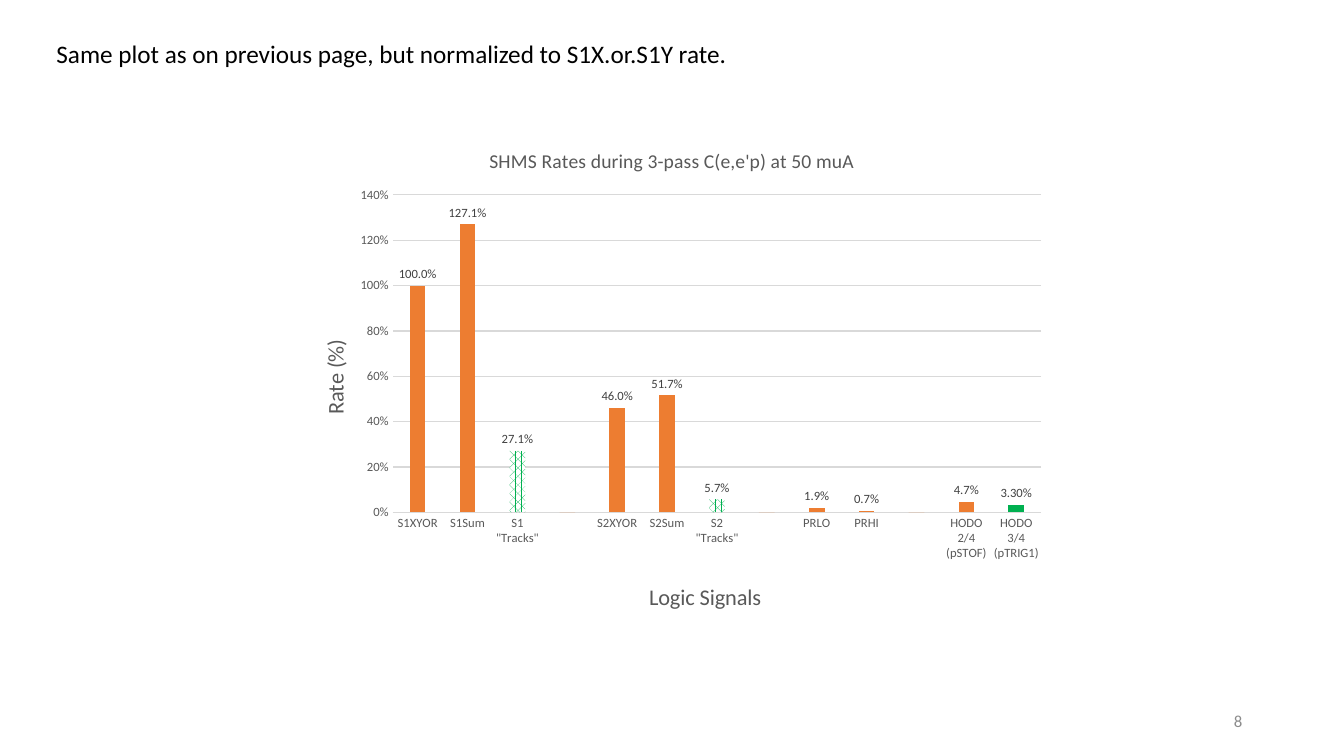
import dataclasses

import pptx
import pptx.chart.data
import pptx.dml.color
import pptx.enum.chart
import pptx.enum.dml
import pptx.enum.text
import pptx.oxml
import pptx.oxml.ns
import pptx.util

Inches = pptx.util.Inches
Color = pptx.dml.color.RGBColor.from_string


@dataclasses.dataclass(frozen=True)
class Theme:
    font: str = "Calibri"
    black: str = "000000"
    white: str = "FFFFFF"
    label: str = "404040"
    axis: str = "595959"
    grid: str = "D9D9D9"
    number: str = "8C8C8C"
    bar: str = "ED7D31"
    green: str = "00B050"
    heading_size: int = 18
    axis_title_size: int = 16
    chart_title_size: int = 14
    number_size: int = 12
    chart_size: int = 10
    label_size: int = 9


THEME = Theme()

RATES = [
    ("S1XYOR", 1), ("S1Sum", 1.271), ('S1 "Tracks"', 0.271), ("", 0),
    ("S2XYOR", 0.46), ("S2Sum", 0.517), ('S2 "Tracks"', 0.057), ("", 0),
    ("PRLO", 0.019), ("PRHI", 0.007), ("", 0),
    ("HODO 2/4 (pSTOF)", 0.047), ("HODO 3/4 (pTRIG1)", 0.033),
]


def set_font(font, size, color):
    font.name = THEME.font
    font.size = pptx.util.Pt(size)
    font.bold = False
    font.color.rgb = Color(color)


def set_line(line, color):
    line.color.rgb = Color(color)
    line.width = pptx.util.Pt(0.75)


def chart_xml(content):
    namespace = pptx.oxml.ns.nsdecls("c")
    tag, separator, rest = content.partition(">")
    if tag.endswith("/"):
        return pptx.oxml.parse_xml(f"{tag[:-1]} {namespace}/>{rest}")
    return pptx.oxml.parse_xml(f"{tag} {namespace}>{rest}")


def set_layout(parent, index, target="", **fractions):
    for layout in parent.xpath("./c:layout"):
        parent.remove(layout)
    modes = "".join(f'<c:{side}Mode val="edge"/>' for side in "xy")
    values = "".join(f'<c:{key} val="{value}"/>' for key, value in fractions.items())
    parent.insert(index, chart_xml(
        f"<c:layout><c:manualLayout>{target}{modes}{values}</c:manualLayout></c:layout>"))


def set_title(text_frame, text, size):
    text_frame.text = text
    set_font(text_frame.paragraphs[0].font, size, THEME.axis)


def format_axes(chart):
    titles = ((chart.category_axis, "Logic Signals"), (chart.value_axis, "Rate (%)"))
    for axis, text in titles:
        set_title(axis.axis_title.text_frame, text, THEME.axis_title_size)
        axis.major_tick_mark = axis.minor_tick_mark = pptx.enum.chart.XL_TICK_MARK.NONE
        set_font(axis.tick_labels.font, THEME.label_size, THEME.axis)
    chart.category_axis.has_major_gridlines = False
    set_line(chart.category_axis.format.line, THEME.grid)
    value_axis = chart.value_axis
    value_axis.minimum_scale, value_axis.maximum_scale = 0, 1.4
    value_axis.major_unit = 0.2
    value_axis.tick_labels.number_format = "0%"
    value_axis.tick_labels.number_format_is_linked = False
    value_axis.format.line.fill.background()
    set_line(value_axis.major_gridlines.format.line, THEME.grid)


def format_bars(series):
    series.invert_if_negative = False
    series.format.fill.solid()
    series.format.fill.fore_color.rgb = Color(THEME.bar)
    for index, (name, rate) in enumerate(RATES):
        if "Tracks" in name:
            fill = series.points[index].format.fill
            fill.patterned()
            fill.pattern = pptx.enum.dml.MSO_PATTERN.PERCENT_60
            fill.fore_color.rgb = Color(THEME.green)
            fill.back_color.rgb = Color(THEME.white)
    trigger_fill = series.points[len(RATES) - 1].format.fill
    trigger_fill.solid()
    trigger_fill.fore_color.rgb = Color(THEME.green)


def format_labels(chart, series):
    outside = pptx.enum.chart.XL_LABEL_POSITION.OUTSIDE_END
    labels = series.data_labels
    labels.show_value = True
    labels.number_format = "0.0%"
    labels.number_format_is_linked = False
    trigger_label = series.points[len(RATES) - 1].data_label
    for label in (labels, trigger_label):
        label.position = outside
        set_font(label.font, THEME.label_size, THEME.label)
    trigger = chart.element.xpath(".//c:ser/c:dLbls/c:dLbl")[0]
    trigger.insert(1, chart_xml('<c:numFmt formatCode="0.00%" sourceLinked="0"/>'))
    for index, (name, rate) in enumerate(RATES):
        if not name:
            trigger.addprevious(chart_xml(
                f'<c:dLbl><c:idx val="{index}"/><c:delete val="1"/></c:dLbl>'))


def add_rate_chart(slide, left, top, width, height):
    data = pptx.chart.data.CategoryChartData()
    data.categories = [name for name, rate in RATES]
    data.add_series("Series 1", [rate for name, rate in RATES])
    frame = slide.shapes.add_chart(
        pptx.enum.chart.XL_CHART_TYPE.COLUMN_CLUSTERED,
        Inches(left), Inches(top), Inches(width), Inches(height), data)
    chart = frame.chart
    chart.has_legend = False
    set_font(chart.font, THEME.chart_size, THEME.black)
    set_title(chart.chart_title.text_frame,
              "SHMS Rates during 3-pass C(e,e'p) at 50 muA", THEME.chart_title_size)
    plot = chart.plots[0]
    plot.gap_width, plot.overlap = 219, -27
    plot.vary_by_categories = False
    format_axes(chart)
    series = plot.series[0]
    format_bars(series)
    format_labels(chart, series)
    root = chart.element
    set_layout(root.xpath(".//c:plotArea")[0], 0,
               '<c:layoutTarget val="inner"/>', x=0.137, y=0.134, w=0.843, h=0.635)
    set_layout(root.xpath(".//c:catAx/c:title")[0], 1, x=0.465, y=0.9)
    set_layout(root.xpath(".//c:valAx/c:title")[0], 1, x=0.037, y=0.415)


def place_text(shape, left, top, width, height, text, size, color, alignment, anchor):
    shape.left, shape.top = Inches(left), Inches(top)
    shape.width, shape.height = Inches(width), Inches(height)
    frame = shape.text_frame
    frame.word_wrap = True
    frame.auto_size = pptx.enum.text.MSO_AUTO_SIZE.NONE
    frame.vertical_anchor = anchor
    frame.text = text
    paragraph = frame.paragraphs[0]
    paragraph.alignment = alignment
    paragraph.line_spacing = 1.0
    set_font(paragraph.font, size, color)


def add_heading(slide, left, top, width, height):
    place_text(slide.shapes.title, left, top, width, height,
               "Same plot as on previous page, but normalized to S1X.or.S1Y rate.",
               THEME.heading_size, THEME.black,
               pptx.enum.text.PP_ALIGN.LEFT, pptx.enum.text.MSO_ANCHOR.TOP)


def add_page_number(slide, left, top, width, height):
    box = slide.shapes.add_textbox(0, 0, 0, 0)
    place_text(box, left, top, width, height, "8", THEME.number_size, THEME.number,
               pptx.enum.text.PP_ALIGN.RIGHT, pptx.enum.text.MSO_ANCHOR.MIDDLE)


def main():
    presentation = pptx.Presentation()
    presentation.slide_width, presentation.slide_height = Inches(13.33), Inches(7.5)
    slide = presentation.slides.add_slide(presentation.slide_layouts[5])
    add_heading(slide, 0.46, 0.33, 7.1, 0.4)
    add_rate_chart(slide, 2.85, 1.27, 7.63, 4.96)
    add_page_number(slide, 9.42, 6.95, 3, 0.4)
    presentation.save("out.pptx")


if __name__ == "__main__":
    main()
